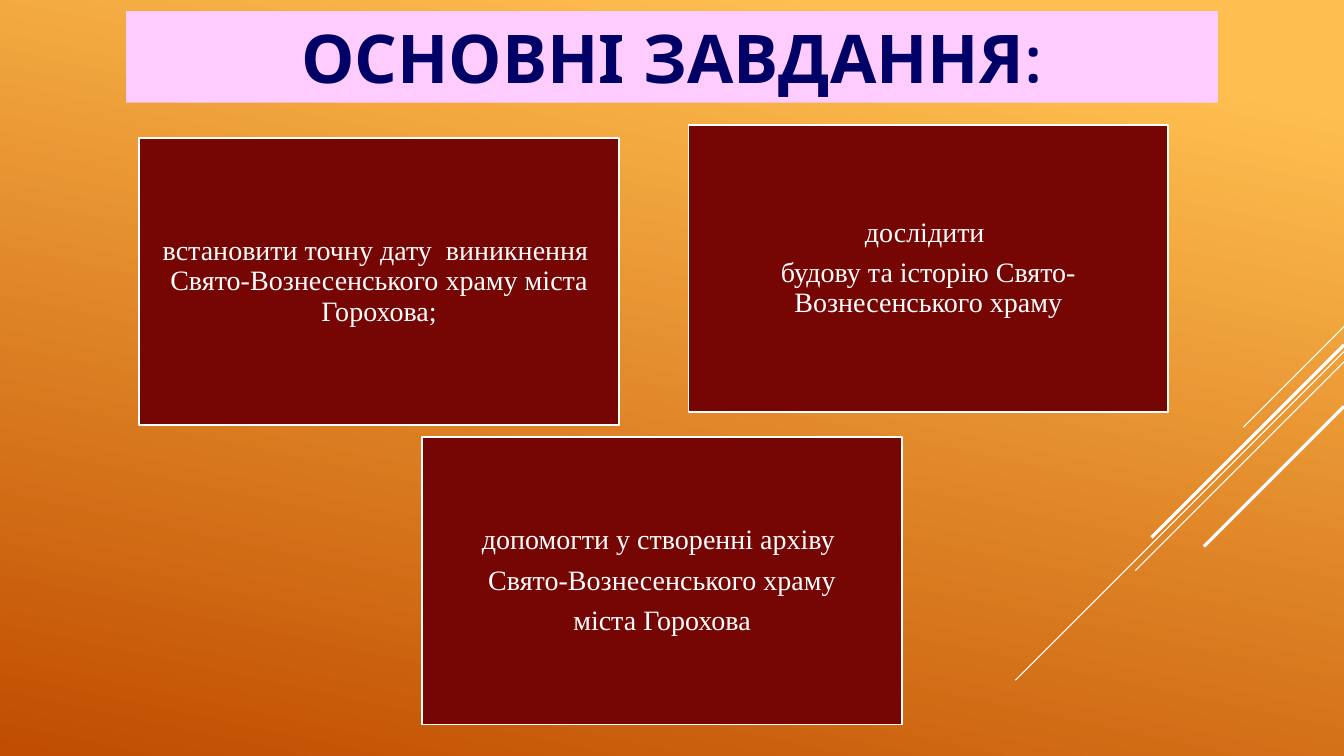
from lxml.etree import SubElement
from pptx import Presentation
from pptx.dml.color import RGBColor
from pptx.enum.shapes import MSO_CONNECTOR as Connector, MSO_SHAPE as Shape
from pptx.enum.text import MSO_ANCHOR as Anchor, PP_ALIGN as Align
from pptx.oxml.ns import qn
from pptx.util import Cm, Pt

WHITE = RGBColor(0xFF, 0xFF, 0xFF)
MAROON = RGBColor(0x76, 0x06, 0x03)
PINK = RGBColor(0xFF, 0xCC, 0xFF)
NAVY = RGBColor(0x00, 0x00, 0x66)
AMBER = RGBColor(0xFF, 0xBF, 0x50)
RUST = RGBColor(0xC0, 0x4D, 0x00)

SLIDE_WIDTH, SLIDE_HEIGHT = 33.87, 19.05
CARD_WIDTH, CARD_HEIGHT = 12.09, 7.24

RAYS = [(8.23, 2.54, 0.75), (8.86, 8.28, 0.75), (9.12, 5.26, 0.75),
        (8.69, 4.85, 2.25), (10.24, 3.53, 2.25)]

TASKS = [
    (3.51, 3.48, ["встановити точну дату  виникнення  Свято-Вознесенського храму міста Горохова;"]),
    (17.35, 3.15, ["дослідити ", "будову та історію Свято-Вознесенського храму"]),
    (10.64, 11.02, ["допомогти у створенні архіву ", "Свято-Вознесенського храму", "міста Горохова"]),
]


class TaskSlide:
    """Draws the elements of a slide in one shared style."""

    title_font = "Quicksand"
    body_font = "Times New Roman"

    def __init__(self, presentation):
        self.slide = presentation.slides.add_slide(presentation.slide_layouts[5])

    def background(self, angle):
        fill = self.slide.background.fill
        fill.gradient()
        fill.gradient_angle = 360 - angle
        for stop, color, position in zip(fill.gradient_stops, (AMBER, RUST), (0.1, 1)):
            stop.color.rgb = color
            stop.position = position

    def text_run(self, paragraph, text, font, size, color, bold=False):
        paragraph.alignment = Align.CENTER
        run = paragraph.add_run()
        run.text = text
        run.font.name = font
        run.font.size = Pt(size)
        run.font.bold = bold
        run.font.color.rgb = color

    def title(self, text, left, top, width, height):
        shape = self.slide.shapes.title
        shape.left, shape.top, shape.width, shape.height = map(Cm, (left, top, width, height))
        shape.fill.solid()
        shape.fill.fore_color.rgb = PINK
        shape.text_frame.vertical_anchor = Anchor.MIDDLE
        self.text_run(shape.text_frame.paragraphs[0], text, self.title_font, 48, NAVY, True)

    def ray(self, top, length, weight):
        ray = self.slide.shapes.add_connector(
            Connector.STRAIGHT, Cm(SLIDE_WIDTH), Cm(top),
            Cm(SLIDE_WIDTH - length), Cm(top + length))
        ray.line.color.rgb = WHITE
        ray.line.width = Pt(weight)
        SubElement(ray._element.spPr, qn("a:effectLst"))

    def card(self, left, top, lines):
        shape = self.slide.shapes.add_shape(
            Shape.RECTANGLE, Cm(left), Cm(top), Cm(CARD_WIDTH), Cm(CARD_HEIGHT))
        shape.shadow.inherit = False
        shape.fill.solid()
        shape.fill.fore_color.rgb = MAROON
        shape.line.color.rgb = WHITE
        shape.line.width = Pt(1.25)
        frame = shape.text_frame
        frame.word_wrap = True
        frame.vertical_anchor = Anchor.MIDDLE
        frame.margin_left = frame.margin_right = Cm(0.2)
        frame.margin_top = frame.margin_bottom = Cm(0.2)
        for index, line in enumerate(lines):
            paragraph = frame.add_paragraph() if index else frame.paragraphs[0]
            paragraph.line_spacing = 0.9
            paragraph.space_after = Pt(7)
            self.text_run(paragraph, line, self.body_font, 20, WHITE)


def main():
    presentation = Presentation()
    presentation.slide_width = Cm(SLIDE_WIDTH)
    presentation.slide_height = Cm(SLIDE_HEIGHT)
    page = TaskSlide(presentation)
    page.background(102)
    for ray in RAYS:
        page.ray(*ray)
    for task in TASKS:
        page.card(*task)
    page.title("ОСНОВНІ ЗАВДАННЯ:", 3.18, 0.28, 27.51, 2.31)
    presentation.save("out.pptx")


if __name__ == "__main__":
    main()
